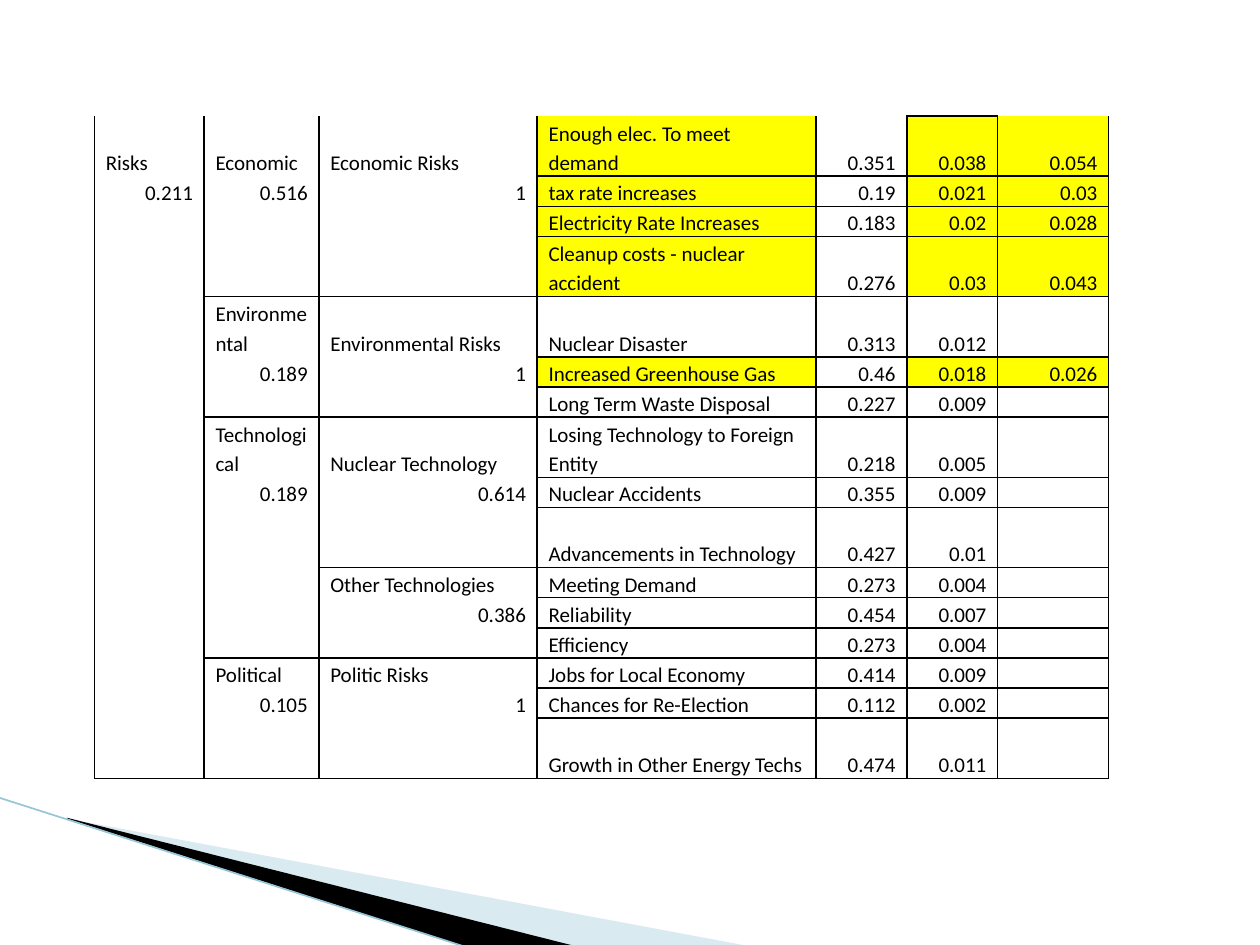
from lxml.etree import SubElement
from pptx import Presentation
from pptx.dml.color import RGBColor
from pptx.enum.shapes import MSO_CONNECTOR
from pptx.enum.text import MSO_ANCHOR, PP_ALIGN
from pptx.oxml.ns import qn
from pptx.util import Inches, Pt

BLACK = RGBColor(0x00, 0x00, 0x00)
YELLOW = RGBColor(0xFF, 0xFF, 0x00)
PALE_BLUE = RGBColor(0xA0, 0xCB, 0xDC)
EDGE_BLUE = RGBColor(0x97, 0xC5, 0xD8)

WIDTH, HEIGHT = Inches(10), Inches(7.5)
COLUMNS = [0.87, 0.91, 1.73, 2.21, 0.72, 0.72, 0.88]
ROW_UNITS = 22
TALL_ROWS = {0, 3, 4, 7, 9, 15}

# column, first row, last row, heading, weight
GROUPS = [
    (0, 0, 15, "Risks", "0.211"),
    (1, 0, 3, "Economic", "0.516"),
    (1, 4, 6, "Environmental", "0.189"),
    (1, 7, 12, "Technological", "0.189"),
    (1, 13, 15, "Political", "0.105"),
    (2, 0, 3, "Economic Risks", "1"),
    (2, 4, 6, "Environmental Risks", "1"),
    (2, 7, 9, "Nuclear Technology", "0.614"),
    (2, 10, 12, "Other Technologies", "0.386"),
    (2, 13, 15, "Politic Risks", "1"),
]
FACTORS = [
    ("Enough elec. To meet demand", "0.351", "0.038", "0.054"),
    ("tax rate increases", "0.19", "0.021", "0.03"),
    ("Electricity Rate Increases", "0.183", "0.02", "0.028"),
    ("Cleanup costs - nuclear accident", "0.276", "0.03", "0.043"),
    ("Nuclear Disaster", "0.313", "0.012", ""),
    ("Increased Greenhouse Gas", "0.46", "0.018", "0.026"),
    ("Long Term Waste Disposal", "0.227", "0.009", ""),
    ("Losing Technology to Foreign Entity", "0.218", "0.005", ""),
    ("Nuclear Accidents", "0.355", "0.009", ""),
    ("Advancements in Technology", "0.427", "0.01", ""),
    ("Meeting Demand", "0.273", "0.004", ""),
    ("Reliability", "0.454", "0.007", ""),
    ("Efficiency", "0.273", "0.004", ""),
    ("Jobs for Local Economy", "0.414", "0.009", ""),
    ("Chances for Re-Election", "0.112", "0.002", ""),
    ("Growth in Other Energy Techs", "0.474", "0.011", ""),
]


def draw_borders(cell, sides):
    """Rule the named sides of a cell in black and clear the others."""
    properties = cell._tc.get_or_add_tcPr()
    for position, side in enumerate("LRTB"):
        line = properties.makeelement(qn(f"a:ln{side}"), {"w": str(Pt(1))})
        properties.insert(position, line)
        if side in sides:
            fill = SubElement(line, qn("a:solidFill"))
            SubElement(fill, qn("a:srgbClr"), val=str(BLACK))
        else:
            SubElement(line, qn("a:noFill"))


def fill_cell(cell, text, sides, highlighted=False):
    """Write one table cell, with numbers set to the right."""
    cell.margin_left = cell.margin_right = Inches(0.09)
    cell.margin_top = cell.margin_bottom = 0
    cell.vertical_anchor = MSO_ANCHOR.BOTTOM
    cell.text = text
    paragraph = cell.text_frame.paragraphs[0]
    paragraph.line_spacing = 1.15
    paragraph.alignment = PP_ALIGN.RIGHT if text[:1].isdigit() else PP_ALIGN.LEFT
    paragraph.font.size = Pt(12)
    paragraph.font.name = "Calibri"
    paragraph.font.color.rgb = BLACK
    if not text:
        SubElement(paragraph._p, qn("a:endParaRPr"), sz="1200")
    if highlighted:
        cell.fill.solid()
        cell.fill.fore_color.rgb = YELLOW
    else:
        cell.fill.background()
    draw_borders(cell, sides)


def add_risk_table(slide, left, top, width, height):
    """Place the table of weighted risks in the given box."""
    frame = slide.shapes.add_table(len(FACTORS), len(COLUMNS), left, top, width, height)
    table = frame.table
    table.first_row = table.horz_banding = False
    for column, share in zip(table.columns, COLUMNS):
        column.width = int(width * share / sum(COLUMNS))
    for index, row in enumerate(table.rows):
        row.height = int(height / ROW_UNITS) * (2 if index in TALL_ROWS else 1)

    for column, first, last, heading, weight in GROUPS:
        for row in range(first, last + 1):
            text = {first: heading, first + 1: weight}.get(row, "")
            sides = "LR" + "T" * (row == first > 0) + "B" * (row == last)
            fill_cell(table.cell(row, column), text, sides)

    for row, (factor, weight, share, priority) in enumerate(FACTORS):
        key = bool(priority)
        entries = [(factor, key), (weight, False), (share, key), (priority, key)]
        for column, (text, highlighted) in enumerate(entries, start=3):
            sides = "LRTB" if row or text == share else "LRB"
            fill_cell(table.cell(row, column), text, sides, highlighted)


def add_wedge(slide, points, color, opacity=100):
    """Draw a filled sliver through points given in inches."""
    start, *others = [(Inches(x), Inches(y)) for x, y in points]
    builder = slide.shapes.build_freeform(*start)
    builder.add_line_segments(others, close=True)
    wedge = builder.convert_to_shape()
    wedge.shadow.inherit = False
    wedge.fill.solid()
    wedge.fill.fore_color.rgb = color
    wedge.line.fill.background()
    if opacity < 100:
        tint = wedge._element.spPr.find(f".//{qn('a:srgbClr')}")
        SubElement(tint, qn("a:alpha"), val=str(opacity * 1000))


def add_corner_sweep(slide, left, top, right, bottom):
    """Place the sweeping wedges and their edge in the lower left corner."""
    add_wedge(slide, [(0.55, 6.5), (5.95, 7.51), (4.56, 7.51)], PALE_BLUE, 40)
    add_wedge(slide, [(0.53, 6.49), (4.57, 7.51), (3.72, 7.52), (0.54, 6.5)], BLACK)
    edge = slide.shapes.add_connector(MSO_CONNECTOR.STRAIGHT, left, top, right, bottom)
    edge.line.color.rgb = EDGE_BLUE
    edge.line.width = Pt(0.95)
    SubElement(edge._element.spPr, qn("a:effectLst"))


def main():
    """Build and save the slide."""
    deck = Presentation()
    deck.slide_width, deck.slide_height = WIDTH, HEIGHT
    slide = deck.slides.add_slide(deck.slide_layouts[6])
    add_corner_sweep(slide, Inches(-0.01), Inches(6.33), Inches(3.71), Inches(7.52))
    add_risk_table(slide, Inches(0.75), Inches(0.92), Inches(8.05), Inches(5.26))
    deck.save("out.pptx")


if __name__ == "__main__":
    main()
